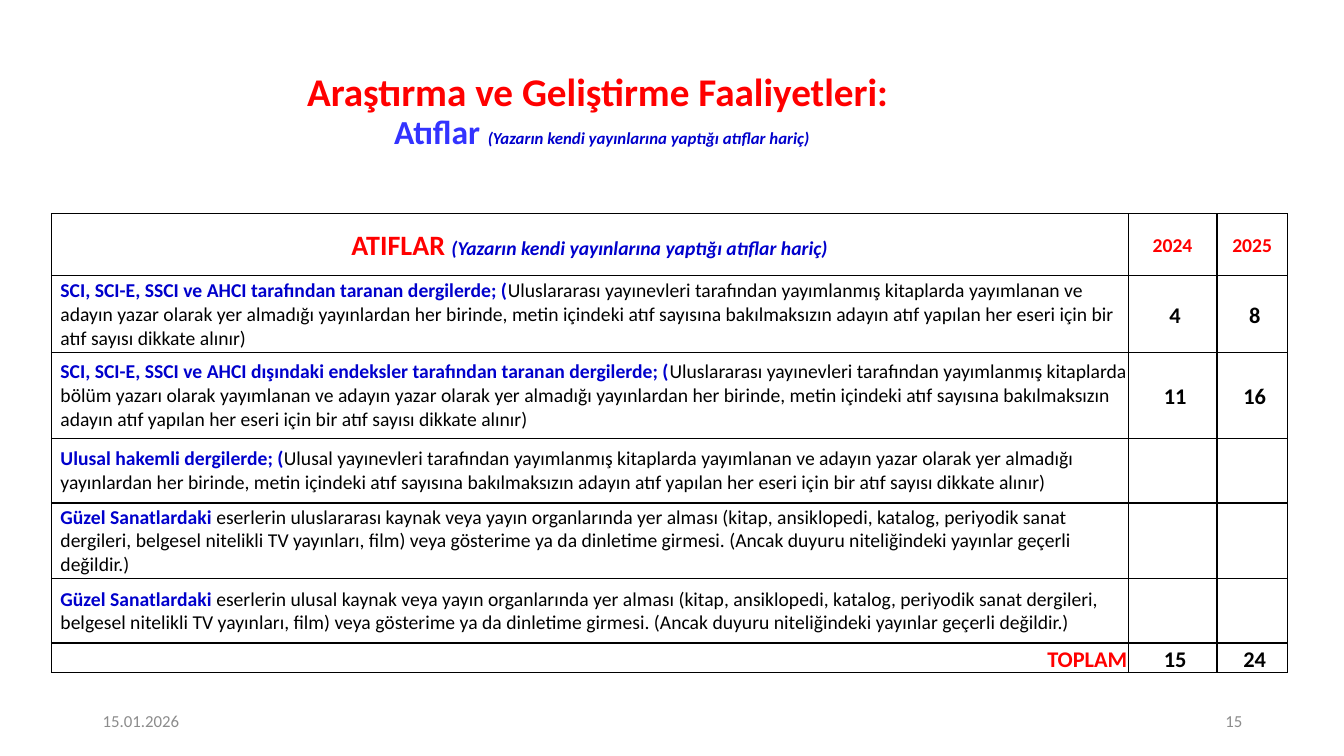
from lxml.etree import SubElement
from pptx import Presentation
from pptx.dml.color import RGBColor
from pptx.enum.text import MSO_ANCHOR, MSO_AUTO_SIZE, PP_ALIGN
from pptx.oxml.ns import qn
from pptx.util import Inches, Pt

RED, BLUE, BLACK, GRAY = "FF0000", "0000CC", "000000", "8C8C8C"
LEFT, CENTER, RIGHT = PP_ALIGN.LEFT, PP_ALIGN.CENTER, PP_ALIGN.RIGHT


def add_run(p, text, size, color, bold=False, italic=False):
    r = p.add_run()
    r.text = text
    values = {"name": "Calibri", "size": Pt(size), "bold": bold, "italic": italic}
    for name, value in values.items():
        setattr(r.font, name, value)
    r.font.color.rgb = RGBColor.from_string(color)


def add_borders(cell):
    """Draw a thin black line on all four sides; must come before the fill."""
    tcPr = cell._tc.get_or_add_tcPr()
    for side in ("a:lnL", "a:lnR", "a:lnT", "a:lnB"):
        ln = SubElement(tcPr, qn(side), w=str(Pt(1)))
        fill = SubElement(ln, qn("a:solidFill"))
        SubElement(fill, qn("a:srgbClr"), val=BLACK)


prs = Presentation()
prs.slide_width, prs.slide_height = Inches(13.33), Inches(7.5)
slide = prs.slides.add_slide(prs.slide_layouts[5])

# Title
NOTE = "(Yazarın kendi yayınlarına yaptığı atıflar hariç)"
title = slide.shapes.title
title.left, title.top = Inches(0.19), Inches(0.68)
title.width, title.height = Inches(11.56), Inches(0.87)
tf = title.text_frame
tf.auto_size = MSO_AUTO_SIZE.NONE
tf.vertical_anchor = MSO_ANCHOR.MIDDLE
p = tf.paragraphs[0]
p.alignment, p.line_spacing = CENTER, 0.9
add_run(p, "Araştırma ve Geliştirme Faaliyetleri: ", 28, RED, True)
p.add_line_break()
add_run(p, "Atıflar ", 24, "3333FF", True)
add_run(p, NOTE, 12, BLUE, True, True)

# Date and slide number
for text, left, align in (("15.01.2026", 0.92, LEFT), ("15", 9.42, RIGHT)):
    tf = slide.shapes.add_textbox(Inches(left), Inches(6.95), Inches(3), Inches(0.4)).text_frame
    tf.word_wrap = True
    tf.vertical_anchor = MSO_ANCHOR.MIDDLE
    tf.paragraphs[0].alignment = align
    add_run(tf.paragraphs[0], text, 12, GRAY)

# Citation table: bold lead, explanation, 2024 count, 2025 count
citations = [
    ("SCI, SCI-E, SSCI ve AHCI tarafından taranan dergilerde; (",
     "Uluslararası yayınevleri tarafından yayımlanmış kitaplarda yayımlanan ve adayın yazar "
     "olarak yer almadığı yayınlardan her birinde, metin içindeki atıf sayısına bakılmaksızın "
     "adayın atıf yapılan her eseri için bir atıf sayısı dikkate alınır)", "4", "8"),
    ("SCI, SCI-E, SSCI ve AHCI dışındaki endeksler tarafından taranan dergilerde; (",
     "Uluslararası yayınevleri tarafından yayımlanmış kitaplarda bölüm yazarı olarak yayımlanan "
     "ve adayın yazar olarak yer almadığı yayınlardan her birinde, metin içindeki atıf sayısına "
     "bakılmaksızın adayın atıf yapılan her eseri için bir atıf sayısı dikkate alınır)", "11", "16"),
    ("Ulusal hakemli dergilerde; (",
     "Ulusal yayınevleri tarafından yayımlanmış kitaplarda yayımlanan ve adayın yazar olarak yer "
     "almadığı yayınlardan her birinde, metin içindeki atıf sayısına bakılmaksızın adayın atıf "
     "yapılan her eseri için bir atıf sayısı dikkate alınır)", "", ""),
    ("Güzel Sanatlardaki ",
     "eserlerin uluslararası kaynak veya yayın organlarında yer alması (kitap, ansiklopedi, "
     "katalog, periyodik sanat dergileri, belgesel nitelikli TV yayınları, film) veya gösterime "
     "ya da dinletime girmesi. (Ancak duyuru niteliğindeki yayınlar geçerli değildir.)", "", ""),
    ("Güzel Sanatlardaki ",
     "eserlerin ulusal kaynak veya yayın organlarında yer alması (kitap, ansiklopedi, katalog, "
     "periyodik sanat dergileri, belgesel nitelikli TV yayınları, film) veya gösterime ya da "
     "dinletime girmesi. (Ancak duyuru niteliğindeki yayınlar geçerli değildir.)", "", ""),
]

# Each cell: alignment, left margin, runs
rows = [[(CENTER, 0.01, [("ATIFLAR ", 20, RED, True), (NOTE, 14, BLUE, True, True)])]
        + [(CENTER, 0.01, [(year, 14, RED, True)]) for year in ("2024", "2025")]]
for lead, detail, *counts in citations:
    rows.append([(LEFT, 0.09, [(lead, 14, BLUE, True), (detail, 14, BLACK)])]
                + [(CENTER, 0.06, [(n, 16, BLACK, True)] if n else []) for n in counts])
rows.append([(RIGHT, 0.01, [("TOPLAM", 16, RED, True)])]
            + [(CENTER, 0.06, [(total, 16, BLACK, True)]) for total in ("15", "24")])

table = slide.shapes.add_table(len(rows), 3, Inches(0.51), Inches(2.12),
                               Inches(12.26), Inches(4.55)).table
table.first_row = table.horz_banding = False
for column, width in zip(table.columns, (10.68, 0.88, 0.7)):
    column.width = Inches(width)
for row, height in zip(table.rows, (0.61, 0.77, 0.85, 0.64, 0.75, 0.64, 0.29)):
    row.height = Inches(height)

for row, contents in zip(table.rows, rows):
    for cell, (align, margin, runs) in zip(row.cells, contents):
        add_borders(cell)
        cell.fill.background()
        cell.vertical_anchor = MSO_ANCHOR.MIDDLE
        cell.margin_left = Inches(margin)
        cell.margin_top = cell.margin_right = Inches(0.01)
        cell.margin_bottom = 0
        p = cell.text_frame.paragraphs[0]
        p.alignment = align
        p.line_spacing = 1.0 if align == LEFT else 1.07
        for run in runs:
            add_run(p, *run)

prs.save("out.pptx")
